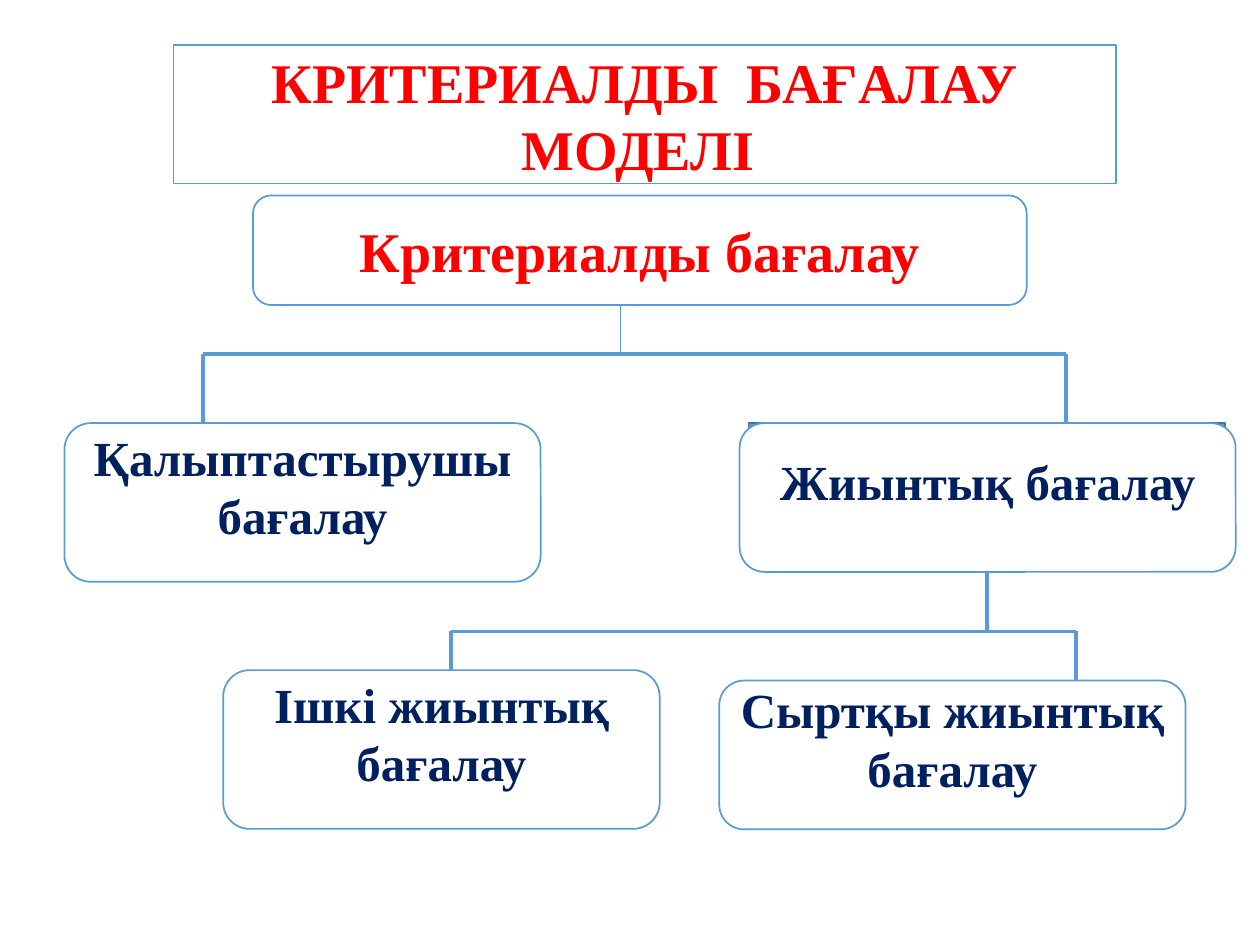
from lxml import etree
from pptx import Presentation
from pptx.dml.color import RGBColor
from pptx.enum.shapes import MSO_CONNECTOR, MSO_SHAPE
from pptx.enum.text import MSO_ANCHOR, MSO_AUTO_SIZE, PP_ALIGN
from pptx.oxml.ns import qn
from pptx.util import Cm, Pt

STRAIGHT = MSO_CONNECTOR.STRAIGHT
RECTANGLE = MSO_SHAPE.RECTANGLE
ROUNDED = MSO_SHAPE.ROUNDED_RECTANGLE
MIDDLE = MSO_ANCHOR.MIDDLE
NO_AUTOFIT = MSO_AUTO_SIZE.NONE
CENTER = PP_ALIGN.CENTER

TITLE_ONLY_LAYOUT = 5
WHITE, BLUE, DARK_BLUE = "FFFFFF", "5B9BD5", "43739E"
RED, NAVY = "FF0000", "002060"
HEADING = {"name": "Times New Roman", "size": Pt(32), "bold": True}
LABEL = {**HEADING, "size": Pt(28)}

TITLE_BOX = (3.5, 0.91, 19, 2.79)
ROOT_BOX = (5.1, 3.94, 15.6, 2.21)
BACKING_BOX = (15.09, 8.53, 9.6, 2.59)
CHILD_BOXES = [
    ("Қалыптастырушы бағалау", (1.3, 8.53, 9.6, 3.2)),
    ("Жиынтық бағалау", (14.91, 8.53, 10, 3)),
    ("Ішкі жиынтық бағалау", (4.5, 13.51, 8.8, 3.2)),
    ("Сыртқы жиынтық бағалау", (14.5, 13.72, 9.4, 3)),
]


def color(hex_string):
    return RGBColor.from_string(hex_string)


def paint(shape, fill, line):
    shape.fill.solid()
    shape.fill.fore_color.rgb = color(fill)
    shape.line.color.rgb = color(line)
    shape.line.width = Pt(1)


def write(shape, text, font_format, text_color, bottom_inset=0.13):
    """Centre the text; a larger bottom inset (cm) lifts it."""
    frame = shape.text_frame
    settings = {
        "word_wrap": True, "auto_size": NO_AUTOFIT, "vertical_anchor": MIDDLE,
        "margin_top": Cm(0.13), "margin_bottom": Cm(bottom_inset),
    }
    for name, value in settings.items():
        setattr(frame, name, value)
    paragraph = frame.paragraphs[0]
    paragraph.alignment = CENTER
    run = paragraph.add_run()
    run.text = text
    for name, value in font_format.items():
        setattr(run.font, name, value)
    run.font.color.rgb = color(text_color)


def add_title(slide, box, text):
    """Turn the title placeholder into a rounded, outlined box."""
    title = slide.shapes.title
    for name, value in zip(("left", "top", "width", "height"), box):
        setattr(title, name, Cm(value))
    geometry = etree.SubElement(title.element.spPr, qn("a:prstGeom"), prst="roundRect")
    etree.SubElement(geometry, qn("a:avLst"))
    paint(title, WHITE, BLUE)
    write(title, text, HEADING, RED)


def add_box(slide, box, kind=ROUNDED, fill=WHITE, line=BLUE):
    shape = slide.shapes.add_shape(kind, *map(Cm, box))
    shape.shadow.inherit = False
    paint(shape, fill, line)
    return shape


def add_line(slide, start, end, width=2.25):
    connector = slide.shapes.add_connector(STRAIGHT, *map(Cm, (*start, *end)))
    connector.line.color.rgb = color(BLUE)
    connector.line.width = Pt(width)
    etree.SubElement(connector.element.spPr, qn("a:effectLst"))


def add_fork(slide, stem_x, top, bar_y, bottom, branches, stem_width=2.25):
    """Draw a stem down to a bar, and a branch down from each bar position."""
    add_line(slide, (stem_x, top), (stem_x, bar_y), stem_width)
    add_line(slide, (min(branches), bar_y), (max(branches), bar_y))
    for x in branches:
        add_line(slide, (x, bar_y), (x, bottom))


def build_model_slide(presentation):
    slide = presentation.slides.add_slide(presentation.slide_layouts[TITLE_ONLY_LAYOUT])
    add_title(slide, TITLE_BOX, "КРИТЕРИАЛДЫ  БАҒАЛАУ МОДЕЛІ ")
    add_fork(slide, 12.5, 5.92, 7.14, 8.7, (4.09, 21.49), stem_width=0.5)
    add_box(slide, BACKING_BOX, RECTANGLE, BLUE, DARK_BLUE)
    add_fork(slide, 19.89, 10.72, 12.73, 13.92, (9.09, 21.69))
    for text, box in CHILD_BOXES:
        write(add_box(slide, box), text, LABEL, NAVY, bottom_inset=0.8)
    write(add_box(slide, ROOT_BOX), "Критериалды бағалау", HEADING, RED)


def main():
    presentation = Presentation()
    presentation.slide_width = Cm(25.4)
    presentation.slide_height = Cm(19.05)
    build_model_slide(presentation)
    presentation.save("out.pptx")


if __name__ == "__main__":
    main()
